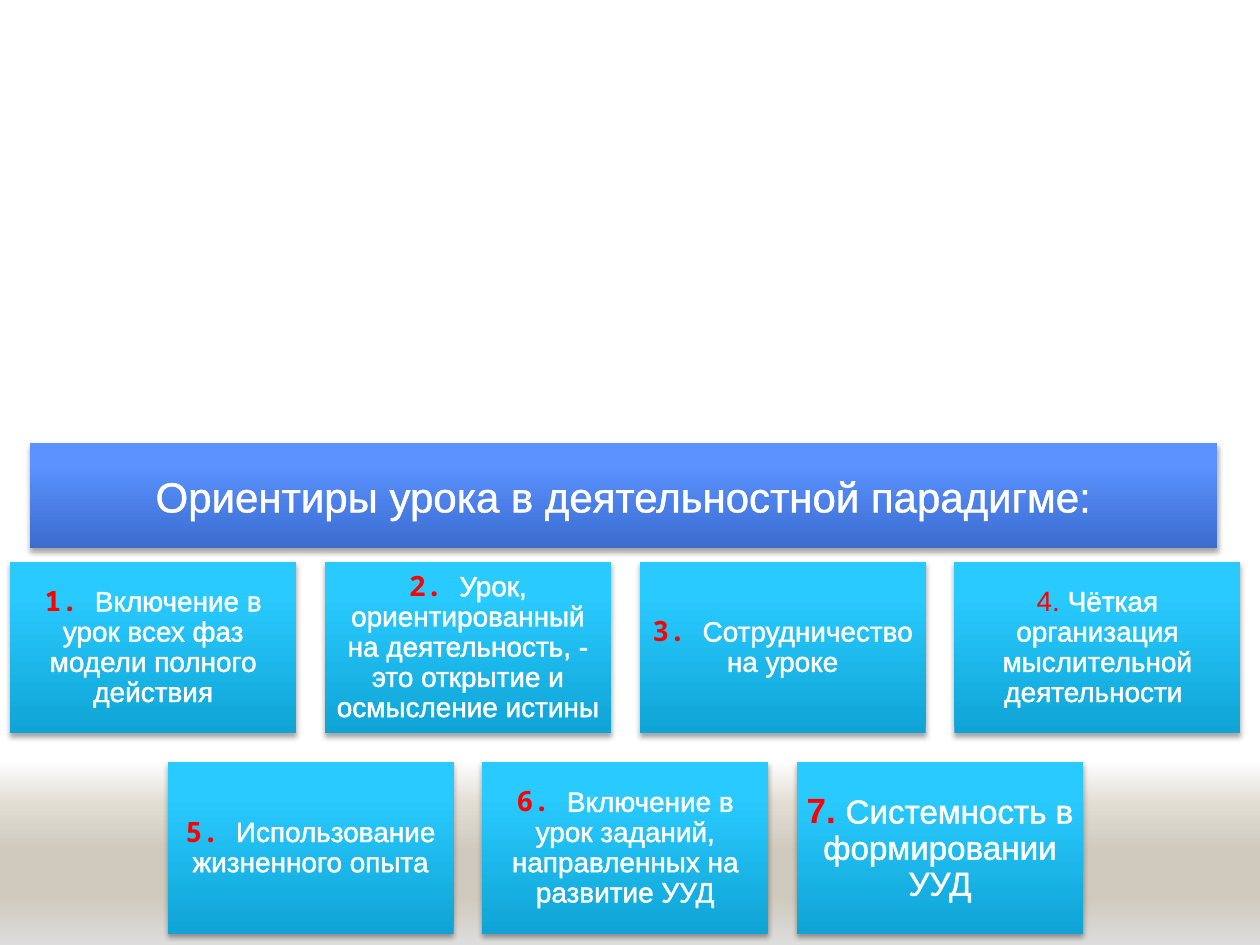
from lxml import etree
from pptx import Presentation
from pptx import util as u
from pptx.dml.color import RGBColor
from pptx.enum import shapes, text
from pptx.oxml import ns, parse_xml

Pt = u.Pt
WHITE, RED = "FFFFFF", "FF0000"
BLUE = [(0, "3B6CCF"), (80, "5B92FF"), (100, "5D93FF")]
CYAN = [(0, "0FA4D5"), (80, "29CAFF"), (100, "2BCAFF")]
FLOOR = [(0, "FFFFFF"), (25, "E0DCD2"), (50, "D0CABE"), (75, "D0CABE"), (100, "DDDDDD")]
MONO = "Noto Sans Mono"

# number, its font, bold, number size, text, text size
CARDS = [
    ("1. ", MONO, True, 16, "Включение в урок всех фаз модели полного действия", 16),
    ("2. ", MONO, True, 16,
     "Урок, ориентированный на деятельность, - это открытие и осмысление истины ", 16),
    ("3. ", MONO, True, 16, "Сотрудничество на уроке", 16),
    ("4. ", "Arial", False, 16, "Чёткая организация мыслительной деятельности ", 16),
    ("5. ", MONO, True, 16, "Использование жизненного опыта", 16),
    ("6. ", MONO, True, 16, "Включение в урок заданий, направленных на развитие УУД", 16),
    ("7. ", "Arial", True, 20, "Системность в формировании УУД", 19),
]


def color(value):
    return RGBColor.from_string(value)


def element(tag, content="", **attributes):
    values = "".join(f' {name}="{value}"' for name, value in attributes.items())
    return parse_xml(f'<a:{tag} {ns.nsdecls("a")}{values}>{content}</a:{tag}>')


def add_panel(slide, box, stops, angle, shadow=True):
    """Add a borderless rectangle with a gradient and, if asked, a soft shadow."""
    panel = slide.shapes.add_shape(shapes.MSO_SHAPE.RECTANGLE, *map(Pt, box))
    panel.shadow.inherit = False
    panel.line.fill.background()
    panel.fill.gradient()
    panel.fill.gradient_angle = 360 - angle
    stop_list = panel.element.spPr.find(".//" + ns.qn("a:gsLst"))
    for stop in list(stop_list):
        stop_list.remove(stop)
    for position, value in stops:
        stop_list.append(element("gs", f'<a:srgbClr val="{value}"/>', pos=position * 1000))
    if shadow:
        effects = panel.element.spPr.find(ns.qn("a:effectLst"))
        effects.append(element(
            "outerShdw", '<a:srgbClr val="000000"><a:alpha val="35000"/></a:srgbClr>',
            blurRad=Pt(3.1), dist=Pt(1.8), dir=5400000, rotWithShape=0))
    return panel


def add_run(paragraph, words, font, size, value, bold=False):
    run = paragraph.add_run()
    run.text = words
    run.font.name, run.font.size, run.font.bold = font, Pt(size), bold
    run.font.color.rgb = color(value)
    return run


def add_outlined_run(paragraph, words, size):
    run = add_run(paragraph, words, "Arial", size, WHITE)
    outline = element("ln", f'<a:solidFill><a:srgbClr val="{WHITE}"/></a:solidFill>', w=Pt(1.45))
    run.font.fill._xPr.insert(0, outline)
    return run


def centre_text(panel, margin):
    frame = panel.text_frame
    frame.word_wrap = True
    frame.vertical_anchor = text.MSO_ANCHOR.MIDDLE
    frame.margin_left = frame.margin_right = Pt(margin)
    frame.margin_top = frame.margin_bottom = Pt(margin)
    paragraph = frame.paragraphs[0]
    paragraph.alignment = text.PP_ALIGN.CENTER
    return paragraph


def add_heading(slide, box):
    paragraph = centre_text(add_panel(slide, box, BLUE, 270), 5)
    add_outlined_run(paragraph, "Ориентиры урока в деятельностной парадигме:", 24)


def add_card(slide, box, card):
    number, font, bold, number_size, words, size = card
    paragraph = centre_text(add_panel(slide, box, CYAN, 270), 5)
    paragraph.line_spacing = 0.9
    add_run(paragraph, number, font, number_size, RED, bold)
    add_outlined_run(paragraph, words, size)


def add_cards(slide, box, columns=4, gap=16.35):
    """Fill the box with rows of cards, each row centred."""
    left, top, width, height = box
    rows = [CARDS[start:start + columns] for start in range(0, len(CARDS), columns)]
    card_width = (width - gap * (columns - 1)) / columns
    card_height = (height - gap * (len(rows) - 1)) / len(rows)
    for row_index, row in enumerate(rows):
        row_left = left + (columns - len(row)) * (card_width + gap) / 2
        for column, card in enumerate(row):
            add_card(slide, (row_left + column * (card_width + gap),
                             top + row_index * (card_height + gap),
                             card_width, card_height), card)


def main():
    presentation = Presentation()
    presentation.slide_width, presentation.slide_height = Pt(720), Pt(540)
    slide = presentation.slides.add_slide(presentation.slide_layouts[6])
    add_panel(slide, (0, 434, 720, 106), FLOOR, 90, shadow=False)
    add_heading(slide, (17, 253.2, 678.5, 60))
    add_cards(slide, (5.8, 321, 703, 212.7))
    presentation.save("out.pptx")


if __name__ == "__main__":
    main()
